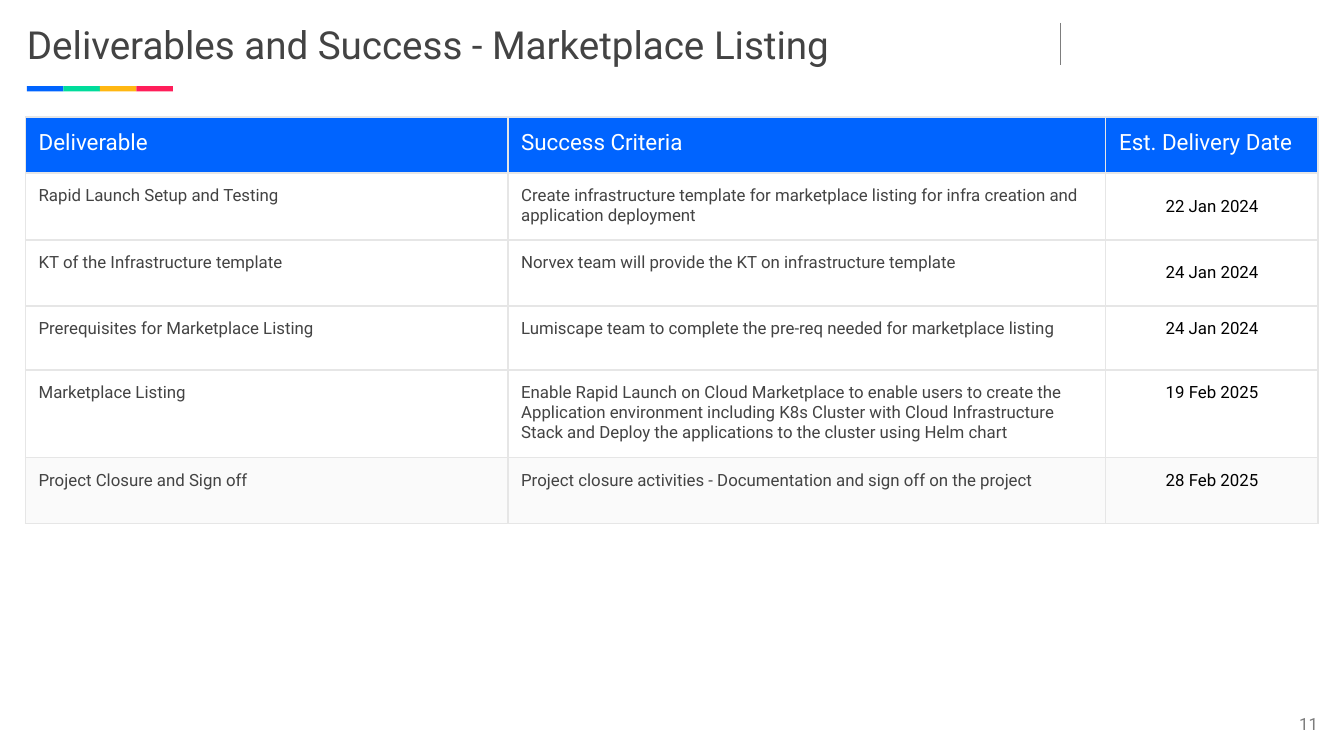
from dataclasses import dataclass

from lxml.etree import SubElement
from pptx import Presentation
from pptx.dml.color import RGBColor as RGB
from pptx.enum.shapes import MSO_CONNECTOR as Conn, MSO_SHAPE as Shape
from pptx.enum.text import MSO_ANCHOR as Anchor, MSO_AUTO_SIZE as AutoSize, PP_ALIGN as Align
from pptx.oxml.ns import qn
from pptx.util import Cm, Pt


@dataclass(frozen=True)
class Theme:
    font: str = "Roboto"
    ink: str = "434343"
    date: str = "000000"
    muted: str = "7D7D7D"
    white: str = "FFFFFF"
    border: str = "E6E6E6"
    shade: str = "FAFAFA"
    accents: tuple = ("0064FF", "00DC9B", "FFB712", "FF1E5A")
    title_size: float = 20.7
    header_size: float = 12
    body_size: float = 9
    hairline: float = 0.75


class SlideBuilder:
    def __init__(self, slide, theme):
        self.s = slide
        self.theme = theme

    def style(self, tf, text, size, color, align=Align.LEFT):
        p = tf.paragraphs[0]
        p.text = text
        p.alignment = align
        p.font.name = self.theme.font
        p.font.size = Pt(size)
        p.font.color.rgb = RGB.from_string(color)
        return p

    def title(self, text, left, top, width, height):
        sp = self.s.shapes.title
        sp.left, sp.top, sp.width, sp.height = Cm(left), Cm(top), Cm(width), Cm(height)
        tf = sp.text_frame
        tf.auto_size = AutoSize.NONE
        tf.word_wrap = True
        tf.vertical_anchor = Anchor.MIDDLE
        tf.margin_left = Cm(0.51)
        tf.margin_right = tf.margin_top = tf.margin_bottom = Cm(0.25)
        self.style(tf, text, self.theme.title_size, self.theme.ink)

    def divider(self, x, top, bottom):
        line = self.s.shapes.add_connector(Conn.STRAIGHT, Cm(x), Cm(top), Cm(x), Cm(bottom))
        line.line.color.rgb = RGB.from_string(self.theme.muted)
        line.line.width = Pt(self.theme.hairline)
        SubElement(line._element.spPr, qn("a:effectLst"))

    def color_strip(self, left, top, width, height):
        for i, color in enumerate(self.theme.accents):
            sp = self.s.shapes.add_shape(
                Shape.RECTANGLE, Cm(left + i * width), Cm(top), Cm(width), Cm(height))
            sp.shadow.inherit = False
            sp.fill.solid()
            sp.fill.fore_color.rgb = RGB.from_string(color)
            sp.line.fill.background()

    def page_number(self, number, left, top, width, height):
        tf = self.s.shapes.add_textbox(Cm(left), Cm(top), Cm(width), Cm(height)).text_frame
        tf.word_wrap = True
        tf.vertical_anchor = Anchor.BOTTOM
        tf.margin_left = tf.margin_right = tf.margin_top = tf.margin_bottom = 0
        p = self.style(tf, number, self.theme.body_size, self.theme.muted, Align.RIGHT)
        p.line_spacing = 0.9

    def borders(self, cell):
        tc_pr = cell._tc.get_or_add_tcPr()
        for side in ("lnL", "lnR", "lnT", "lnB"):
            ln = SubElement(tc_pr, qn(f"a:{side}"), w=str(Pt(self.theme.hairline)))
            fill = SubElement(ln, qn("a:solidFill"))
            SubElement(fill, qn("a:srgbClr"), val=self.theme.border)

    def cell(self, cell, text, size, color, fill=None, align=Align.LEFT, anchor=Anchor.TOP):
        cell.margin_left = cell.margin_right = cell.margin_top = cell.margin_bottom = Cm(0.25)
        cell.vertical_anchor = anchor
        self.borders(cell)
        if fill:
            cell.fill.solid()
            cell.fill.fore_color.rgb = RGB.from_string(fill)
        else:
            cell.fill.background()
        self.style(cell.text_frame, text, size, color, align)

    def table(self, header, rows, left, top, widths, heights, middle_dates):
        t = self.theme
        table = self.s.shapes.add_table(
            len(rows) + 1, len(header), Cm(left), Cm(top),
            Cm(sum(widths)), Cm(sum(heights))).table
        table.first_row = table.horz_banding = False
        for column, width in zip(table.columns, widths):
            column.width = Cm(width)
        for row, height in zip(table.rows, heights):
            row.height = Cm(height)
        for c, text in enumerate(header):
            self.cell(table.cell(0, c), text, t.header_size, t.white, t.accents[0])
        for r, (deliverable, criteria, date) in enumerate(rows, 1):
            fill = t.shade if r == len(rows) else None
            anchor = Anchor.MIDDLE if r <= middle_dates else Anchor.TOP
            for c, text in enumerate((deliverable, criteria)):
                self.cell(table.cell(r, c), text, t.body_size, t.ink, fill)
            self.cell(table.cell(r, 2), date, t.body_size, t.date, fill, Align.CENTER, anchor)


HEADER = ("Deliverable", "Success Criteria", "Est. Delivery Date")
ROWS = (
    ("Rapid Launch Setup and Testing",
     "Create infrastructure template for marketplace listing for infra creation and "
     "application deployment",
     "22 Jan 2024"),
    ("KT of the Infrastructure template",
     "Norvex team will provide the KT on infrastructure template",
     "24 Jan 2024"),
    ("Prerequisites for Marketplace Listing",
     "Lumiscape team to complete the pre-req needed for marketplace listing",
     "24 Jan 2024"),
    ("Marketplace Listing",
     "Enable Rapid Launch on Cloud Marketplace to enable users to create the "
     "Application environment including K8s Cluster with Cloud Infrastructure "
     "Stack and Deploy the applications to the cluster using Helm chart",
     "19 Feb 2025"),
    ("Project Closure and Sign off",
     "Project closure activities - Documentation and sign off on the project",
     "28 Feb 2025"),
)


def main():
    prs = Presentation()
    prs.slide_width, prs.slide_height = Cm(25.4), Cm(14.29)
    slide = SlideBuilder(prs.slides.add_slide(prs.slide_layouts[5]), Theme())
    slide.divider(20.04, 0.43, 1.22)
    slide.color_strip(0.51, 1.63, 0.69, 0.1)
    slide.page_number("11", 23.39, 13.23, 1.52, 0.64)
    slide.title("Deliverables and Success - Marketplace Listing", 0, -0.05, 16.38, 1.78)
    slide.table(HEADER, ROWS, 0.48, 2.21, (9.12, 11.3, 4.01),
                (1.06, 1.26, 1.25, 1.21, 1.63, 1.25), middle_dates=2)
    prs.save("out.pptx")


if __name__ == "__main__":
    main()
